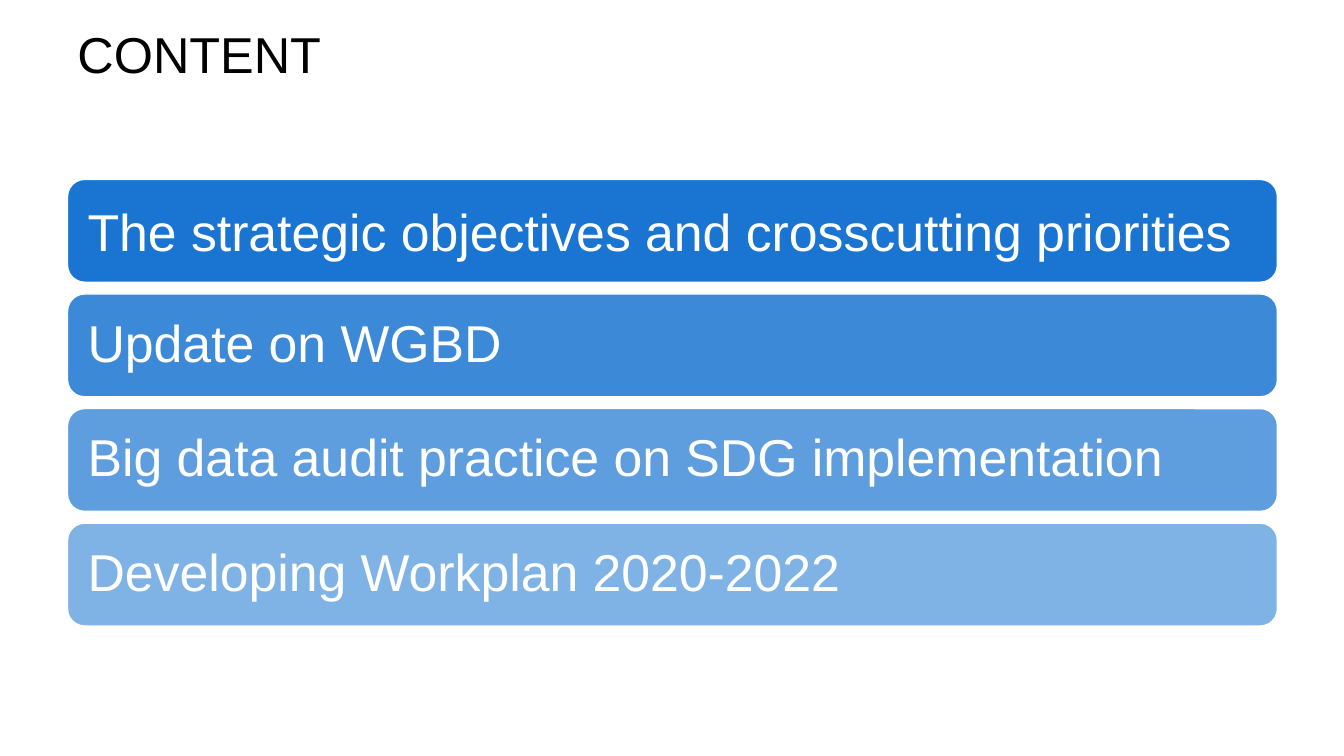
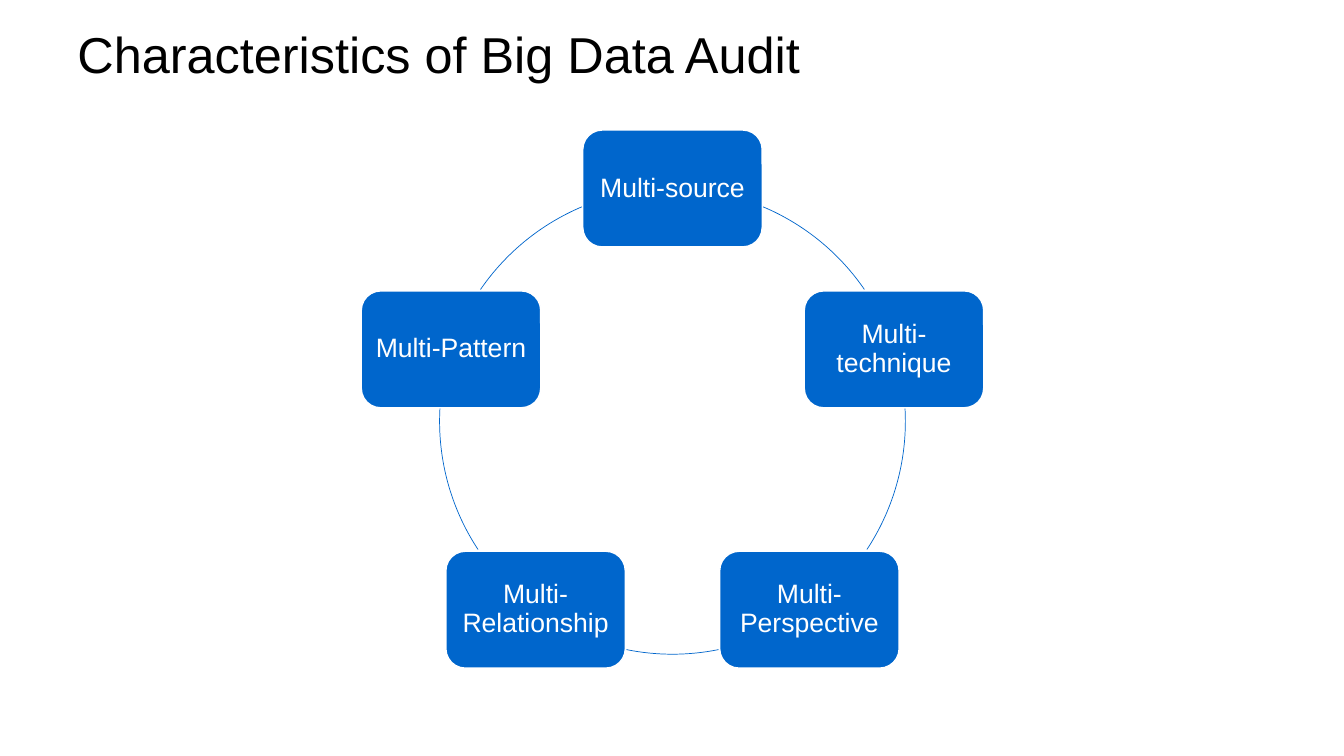
import math
from dataclasses import dataclass

import lxml.etree
import pptx
import pptx.dml.color
import pptx.enum.shapes
import pptx.enum.text
import pptx.oxml.ns
import pptx.util

Inches = pptx.util.Inches
Pt = pptx.util.Pt
Shape = pptx.enum.shapes.MSO_SHAPE
Align = pptx.enum.text.PP_ALIGN


@dataclass(frozen=True)
class Theme:
    font: str = "Arial"
    blue: str = "0066CC"
    white: str = "FFFFFF"
    black: str = "000000"
    title_size: int = 36
    bar_size: int = 37
    node_size: int = 19
    outline: float = 1
    ring_line: float = 0.5


THEME = Theme()

AGENDA = [
    "The strategic objectives and crosscutting priorities",
    "Update on WGBD",
    "Big data audit practice on SDG implementation",
    "Developing Workplan 2020-2022",
]
CHARACTERISTICS = [
    "Multi-source",
    "Multi-technique",
    "Multi-Perspective",
    "Multi-Relationship",
    "Multi-Pattern",
]

# Margins and title, in inches
LEFT, CONTENT_WIDTH = 0.67, 12

# Agenda bars: tops are evenly spaced, opacity falls evenly
BAR_HEIGHT, FIRST_BAR_TOP, LAST_BAR_TOP = 1.02, 1.78, 5.19
FIRST_OPACITY, LAST_OPACITY = 90, 50

# Ring of nodes; arc spans are degrees clockwise from the top
CENTER_X, CENTER_Y, RADIUS = 6.67, 4.18, 2.31
NODE_WIDTH, NODE_HEIGHT = 1.78, 1.16
RIGHT_ARCS = [(22.9, 55.5), (86.8, 123.4)]
BOTTOM_ARC = (168.6, 191.4)


def rgb(color):
    return pptx.dml.color.RGBColor.from_string(color)


def set_text(shape, text, size, color, inset, align=Align.LEFT, spacing=1.0):
    frame = shape.text_frame
    frame.word_wrap = True
    frame.vertical_anchor = pptx.enum.text.MSO_ANCHOR.MIDDLE
    frame.margin_left = frame.margin_right = Inches(inset)
    frame.margin_top = frame.margin_bottom = Inches(min(inset, 0.05))
    frame.text = text
    para = frame.paragraphs[0]
    para.alignment = align
    para.line_spacing = spacing
    para.font.name = THEME.font
    para.font.size = Pt(size)
    para.font.color.rgb = rgb(color)


def add_titled_slide(deck, title):
    slide = deck.slides.add_slide(deck.slide_layouts[6])
    box = slide.shapes.add_textbox(
        Inches(LEFT), Inches(0.21), Inches(CONTENT_WIDTH), Inches(0.64))
    set_text(box, title, THEME.title_size, THEME.black, 0.1)
    return slide


def add_card(slide, left, top, width, height, opacity=100):
    card = slide.shapes.add_shape(
        Shape.ROUNDED_RECTANGLE,
        Inches(left), Inches(top), Inches(width), Inches(height))
    card.shadow.inherit = False
    card.fill.solid()
    card.fill.fore_color.rgb = rgb(THEME.blue)
    card.line.color.rgb = rgb(THEME.white)
    card.line.width = Pt(THEME.outline)
    if opacity < 100:
        qn = pptx.oxml.ns.qn
        color = card.fill._xPr.find(qn("a:solidFill")).find(qn("a:srgbClr"))
        lxml.etree.SubElement(color, qn("a:alpha"), val=str(opacity * 1000))
    return card


def add_ring_arc(slide, start, end):
    arc = slide.shapes.add_shape(
        Shape.ARC, Inches(CENTER_X - RADIUS), Inches(CENTER_Y - RADIUS),
        Inches(2 * RADIUS), Inches(2 * RADIUS))
    arc.shadow.inherit = False
    arc.fill.background()
    arc.line.color.rgb = rgb(THEME.blue)
    arc.line.width = Pt(THEME.ring_line)
    # Preset angles start at three o'clock, in 60000ths of a degree
    for index, angle in enumerate((start, end)):
        arc.adjustments[index] = (angle - 90) % 360 * 0.6


def add_agenda(slide, items):
    steps = len(items) - 1
    pitch = (LAST_BAR_TOP - FIRST_BAR_TOP) / steps
    fade = (FIRST_OPACITY - LAST_OPACITY) / steps
    for index, item in enumerate(items):
        bar = add_card(slide, LEFT, FIRST_BAR_TOP + index * pitch,
                       CONTENT_WIDTH, BAR_HEIGHT,
                       round(FIRST_OPACITY - index * fade))
        set_text(bar, item, THEME.bar_size, THEME.white, 0.15,
                 spacing=0.9 if index else 1.0)


def add_cycle(slide, labels):
    # Arcs on the left mirror those on the right
    left_arcs = [(360 - end, 360 - start) for start, end in RIGHT_ARCS]
    for start, end in RIGHT_ARCS + [BOTTOM_ARC] + left_arcs:
        add_ring_arc(slide, start, end)
    for index, label in enumerate(labels):
        angle = 2 * math.pi * index / len(labels)
        node = add_card(
            slide,
            CENTER_X + RADIUS * math.sin(angle) - NODE_WIDTH / 2,
            CENTER_Y - RADIUS * math.cos(angle) - NODE_HEIGHT / 2,
            NODE_WIDTH, NODE_HEIGHT)
        set_text(node, label, THEME.node_size, THEME.white, 0.07,
                 Align.CENTER, 0.9)


def main():
    deck = pptx.Presentation()
    deck.slide_width = Inches(13.33)
    deck.slide_height = Inches(7.5)
    add_agenda(add_titled_slide(deck, "CONTENT"), AGENDA)
    add_cycle(add_titled_slide(deck, "Characteristics of Big Data Audit"),
              CHARACTERISTICS)
    deck.save("out.pptx")


if __name__ == "__main__":
    main()
